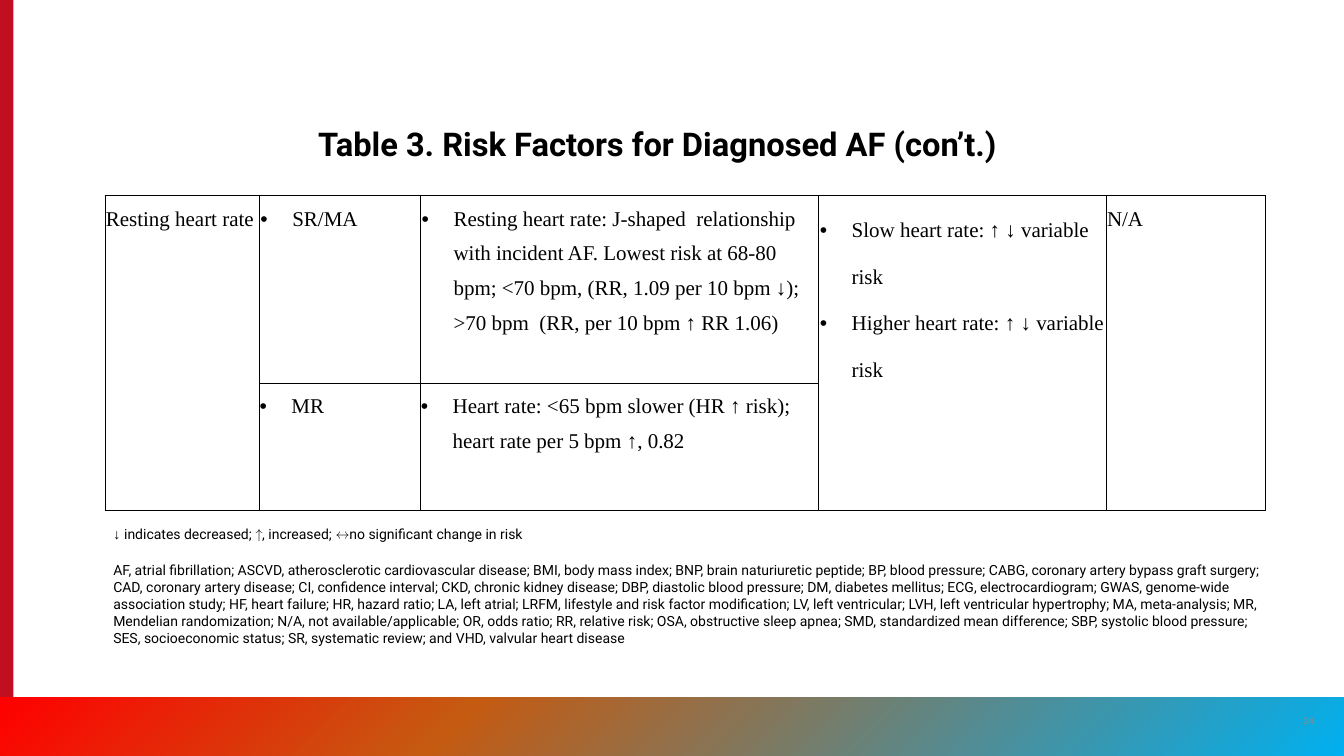
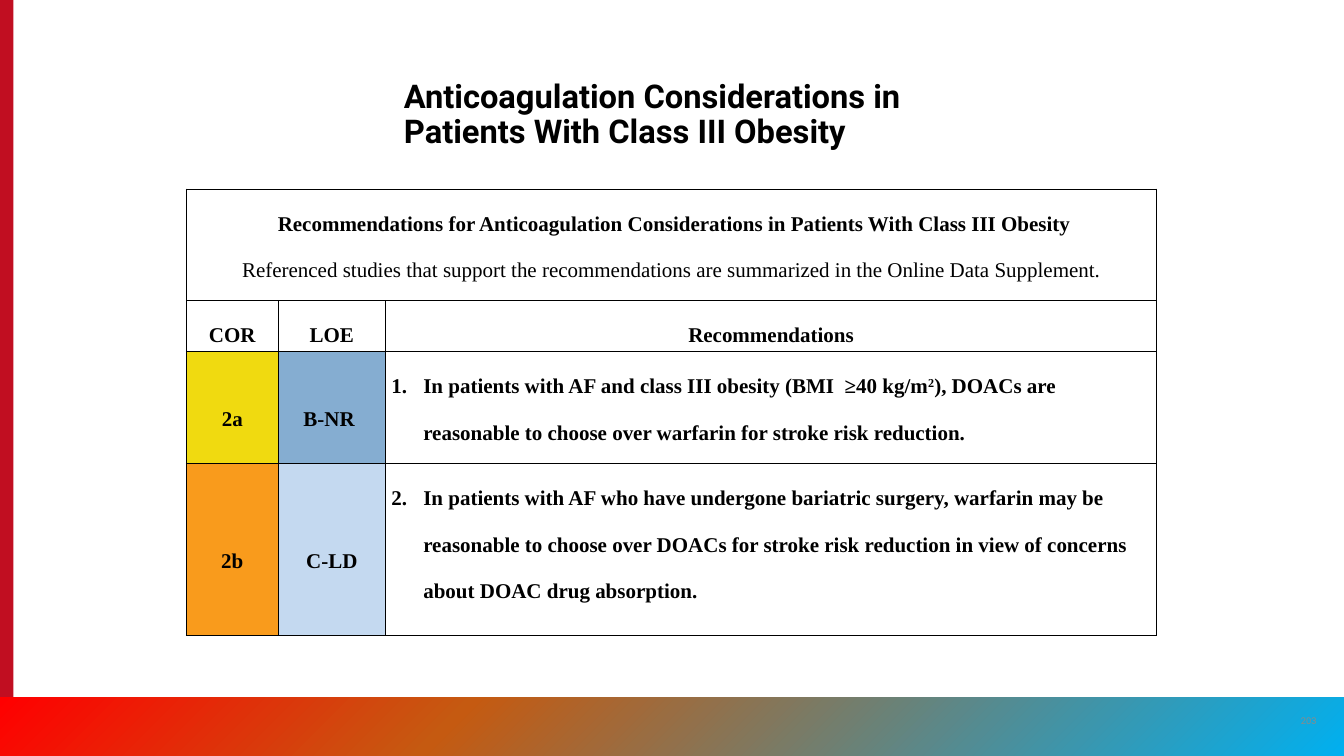
import lxml.etree
import pptx
import pptx.dml.color
import pptx.enum.dml
import pptx.enum.shapes
import pptx.enum.text
import pptx.oxml.ns
import pptx.util
from dataclasses import dataclass
from typing import Optional

PX = 9144
WIDTH, HEIGHT = 1600, 900
BLACK, GREY, RED = "000000", "8A8B8A", "C10E21"
BAND_STOPS = ((0, "00B0F0"), (66, "C55A11"), (100, "FF0000"))
SANS, SERIF = "Roboto", "Times New Roman"
PLAIN_TABLE = "{2D5ABB26-0587-4C30-8999-92F81FD0307C}"
ALL_SIDES = "LRTB"
LEFT = pptx.enum.text.PP_ALIGN.LEFT
CENTER = pptx.enum.text.PP_ALIGN.CENTER
TOP = pptx.enum.text.MSO_ANCHOR.TOP
MIDDLE = pptx.enum.text.MSO_ANCHOR.MIDDLE
BOTTOM = pptx.enum.text.MSO_ANCHOR.BOTTOM
qn = pptx.oxml.ns.qn


@dataclass(frozen=True)
class Run:
    text: str
    size: int = 18
    font: str = SERIF
    bold: bool = False
    color: str = BLACK
    superscript: bool = False


@dataclass(frozen=True)
class Para:
    runs: tuple[Run, ...]
    spacing: float = 1.0
    align: pptx.enum.text.PP_ALIGN = LEFT
    bullet: bool = False
    number: Optional[int] = None


@dataclass(frozen=True)
class Cell:
    paras: tuple[Para, ...]
    fill: Optional[str] = None
    anchor: pptx.enum.text.MSO_ANCHOR = TOP
    span: int = 1


@dataclass(frozen=True)
class Table:
    left: int
    top: int
    cols: tuple[int, ...]
    rows: tuple[int, ...]
    cells: tuple[tuple[Cell, ...], ...]
    inset: int
    sides: str = ALL_SIDES


def px(n: int) -> pptx.util.Emu:
    return pptx.util.Emu(n * PX)


def rgb(color: str) -> pptx.dml.color.RGBColor:
    return pptx.dml.color.RGBColor.from_string(color)


def child(parent, tag: str, **attrs: str):
    return lxml.etree.SubElement(parent, qn(tag), attrs)


def add_list_mark(p, para: Para) -> None:
    pPr = p._p.get_or_add_pPr()
    pPr.set("marL", str(px(38)))
    pPr.set("indent", str(-px(38)))
    if para.number is None:
        child(pPr, "a:buFont", typeface="Arial")
        child(pPr, "a:buChar", char="•")
    else:
        child(pPr, "a:buAutoNum", type="arabicPeriod", startAt=str(para.number))


def fill_text(tf, paras: tuple[Para, ...]) -> None:
    for i, para in enumerate(paras):
        p = tf.paragraphs[0] if i == 0 else tf.add_paragraph()
        if para.bullet or para.number is not None:
            add_list_mark(p, para)
        p.alignment = para.align
        p.line_spacing = para.spacing
        for run in para.runs:
            r = p.add_run()
            r.text = run.text
            r.font.size = pptx.util.Pt(run.size)
            r.font.name = run.font
            r.font.bold = run.bold
            r.font.color.rgb = rgb(run.color)
            if run.superscript:
                r._r.get_or_add_rPr().set("baseline", "30000")


def add_text(s, left: int, top: int, width: int, height: int, para: Para,
             anchor=TOP, grow: bool = False) -> None:
    tf = s.shapes.add_textbox(px(left), px(top), px(width), px(height)).text_frame
    tf.word_wrap = True
    tf.vertical_anchor = anchor
    if grow:
        tf.auto_size = pptx.enum.text.MSO_AUTO_SIZE.SHAPE_TO_FIT_TEXT
    fill_text(tf, (para,))


def add_rect(s, left: int, top: int, width: int, height: int):
    sp = s.shapes.add_shape(pptx.enum.shapes.MSO_SHAPE.RECTANGLE,
                            px(left), px(top), px(width), px(height))
    sp.shadow.inherit = False
    sp.line.fill.background()
    return sp


def add_frame(prs, page: str):
    s = prs.slides.add_slide(prs.slide_layouts[6])
    bar = add_rect(s, 0, 0, 16, HEIGHT)
    bar.fill.solid()
    bar.fill.fore_color.rgb = rgb(RED)
    band = add_rect(s, 0, 830, WIDTH, 70)
    band.rotation = 180
    band.fill.gradient()
    band.fill.gradient_angle = 315
    stops = band._element.spPr.find(qn("a:gradFill")).find(qn("a:gsLst"))
    for stop in list(stops):
        stops.remove(stop)
    for percent, color in BAND_STOPS:
        stop = child(stops, "a:gs", pos=str(percent * 1000))
        child(stop, "a:srgbClr", val=str(rgb(color)))
    number = Para((Run(page, 8, SANS, color=GREY),), align=CENTER)
    add_text(s, 1534, 834, 48, 48, number, MIDDLE)
    return s


def add_title(s, left: int, top: int, width: int, height: int, text: str) -> None:
    add_text(s, left, top, width, height, Para((Run(text, 28, SANS, True),), 0.9), BOTTOM)


def set_borders(tc, sides: str) -> None:
    tcPr = tc._tc.get_or_add_tcPr()
    for side in ALL_SIDES:
        ln = child(tcPr, f"a:ln{side}", w=str(pptx.util.Pt(1)))
        if side in sides:
            child(child(ln, "a:solidFill"), "a:srgbClr", val=str(rgb(BLACK)))
        else:
            child(ln, "a:noFill")


def add_table(s, table: Table) -> None:
    frame = s.shapes.add_table(len(table.rows), len(table.cols), px(table.left), px(table.top),
                               px(sum(table.cols)), px(sum(table.rows)))
    tbl = frame.table
    tbl.first_row = tbl.horz_banding = False
    tbl._tbl.tblPr.find(qn("a:tableStyleId")).text = PLAIN_TABLE
    for column, width in zip(tbl.columns, table.cols):
        column.width = px(width)
    for row, height in zip(tbl.rows, table.rows):
        row.height = px(height)
    for tc in tbl.iter_cells():
        set_borders(tc, table.sides)
        tc.fill.background()
    for i, row in enumerate(table.cells):
        for j, cell in enumerate(row):
            tc = tbl.cell(i, j)
            if cell.span > 1:
                tc.merge(tbl.cell(i, j + cell.span - 1))
            tc.margin_left = tc.margin_right = px(table.inset)
            tc.margin_top = tc.margin_bottom = 0
            tc.vertical_anchor = cell.anchor
            if cell.fill:
                tc.fill.solid()
                tc.fill.fore_color.rgb = rgb(cell.fill)
            fill_text(tc.text_frame, cell.paras)


def factor(*texts: str, spacing: float = 1.5, bullet: bool = True) -> Cell:
    return Cell(tuple(Para((Run(text),), spacing, bullet=bullet) for text in texts))


def centred(text: str, bold: bool = True) -> Para:
    return Para((Run(text, bold=bold),), 2.0, CENTER)


def header(text: str) -> Cell:
    return Cell((centred(text),))


def grade(text: str, fill: str) -> Cell:
    return Cell((centred(text),), fill, MIDDLE)


def advice(number: int, *runs: Run) -> Cell:
    return Cell((Para(runs, 2.0, number=number),))


RISK_FACTORS = Table(125, 233, (184, 192, 474, 342, 190), (375,), ((
    factor("Resting heart rate", bullet=False),
    factor("SR/MA"),
    factor("Resting heart rate: J-shaped  relationship with incident AF. Lowest risk at 68-80 bpm; "
           "<70 bpm, (RR, 1.09 per 10 bpm ↓);  >70 bpm  (RR, per 10 bpm ↑ RR 1.06)"),
    factor("Slow heart rate: ↑ ↓ variable risk", "Higher heart rate: ↑ ↓ variable risk", spacing=2.0),
    factor("N/A", bullet=False),
),), 1)

MENDELIAN = Table(308, 456, (192, 475), (158,), ((
    factor("MR"),
    factor("Heart rate: <65 bpm slower (HR ↑ risk); heart rate per 5 bpm ↑, 0.82"),
),), 1, "T")

RECOMMENDATIONS = Table(222, 225, (109, 128, 918), (133, 61, 133, 205), (
    (Cell((
        centred(" Recommendations for Anticoagulation Considerations in Patients With Class III Obesity"),
        centred("Referenced studies that support the recommendations are summarized in the "
                "Online Data Supplement.", False),
    ), span=3),),
    (header("COR"), header("LOE"), header("Recommendations")),
    (grade("2a", "F0DA10"), grade("B-NR ", "85ADD1"), advice(
        1,
        Run("In patients with AF and class III obesity (BMI  ≥40 kg/m", bold=True),
        Run("2", bold=True, superscript=True),
        Run("), DOACs are reasonable to choose over warfarin for stroke risk reduction.", bold=True))),
    (grade("2b", "F99B1C"), grade("C-LD", "C4D9F0"), advice(
        2,
        Run("In patients with AF who have undergone bariatric surgery, warfarin may be reasonable to "
            "choose over DOACs for stroke risk reduction in view of concerns about DOAC drug "
            "absorption.", bold=True))),
), 7)

LEGEND = Para((
    Run("↓ ", 12, "Arial"),
    Run("indicates decreased; ↑, increased; ↔no significant change in risk", 12, SANS),
))

ABBREVIATIONS = (
    "AF, atrial fibrillation; ASCVD, atherosclerotic cardiovascular disease; BMI, body mass index",
    "BNP, brain naturiuretic peptide; BP, blood pressure; CABG, coronary artery bypass graft surgery",
    "CAD, coronary artery disease; CI, confidence interval; CKD, chronic kidney disease",
    "DBP, diastolic blood pressure; DM, diabetes mellitus; ECG, electrocardiogram",
    "GWAS, genome-wide association study; HF, heart failure; HR, hazard ratio; LA, left atrial",
    "LRFM, lifestyle and risk factor modification; LV, left ventricular",
    "LVH, left ventricular hypertrophy; MA, meta-analysis; MR, Mendelian randomization",
    "N/A, not available/applicable; OR, odds ratio; RR, relative risk; OSA, obstructive sleep apnea",
    "SMD, standardized mean difference; SBP, systolic blood pressure; SES, socioeconomic status",
    "SR, systematic review; and VHD, valvular heart disease",
)


def add_risk_slide(prs) -> None:
    s = add_frame(prs, "24")
    add_title(s, 369, 142, 862, 58, "Table 3. Risk Factors for Diagnosed AF (con’t.)")
    add_table(s, RISK_FACTORS)
    add_table(s, MENDELIAN)
    add_text(s, 125, 621, 635, 30, LEGEND, grow=True)
    abbreviations = Para((Run("; ".join(ABBREVIATIONS), 12, SANS),))
    add_text(s, 125, 664, 1392, 131, abbreviations, grow=True)


def add_obesity_slide(prs) -> None:
    s = add_frame(prs, "203")
    add_title(s, 471, 92, 658, 92, "Anticoagulation Considerations in Patients With Class III Obesity")
    add_table(s, RECOMMENDATIONS)


def main() -> None:
    prs = pptx.Presentation()
    prs.slide_width, prs.slide_height = px(WIDTH), px(HEIGHT)
    add_risk_slide(prs)
    add_obesity_slide(prs)
    prs.save("out.pptx")


if __name__ == "__main__":
    main()
